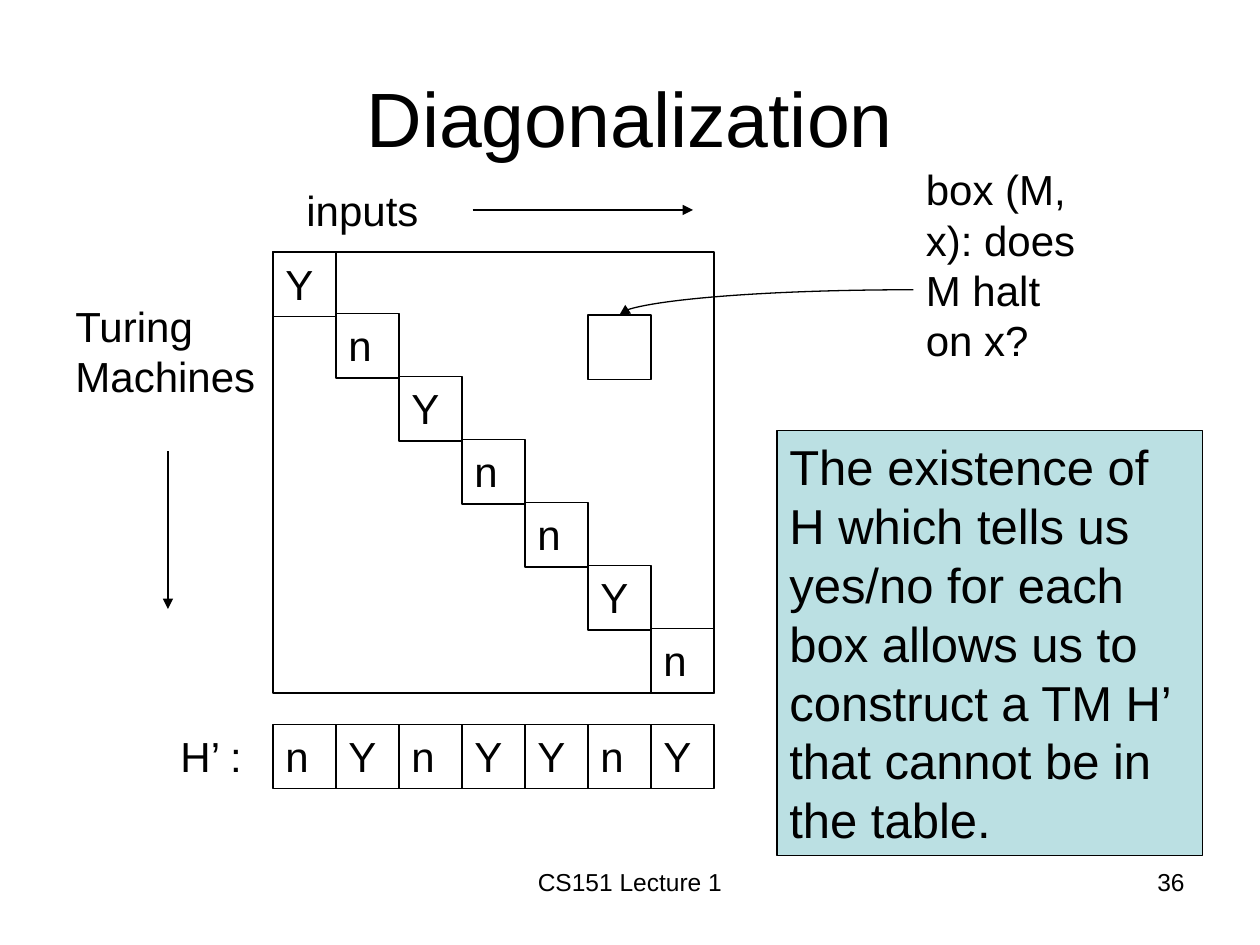
from dataclasses import dataclass

from lxml import etree
from pptx import Presentation
from pptx import util as u
from pptx.dml.color import RGBColor
from pptx.enum import shapes, text
from pptx.oxml.ns import qn

COLS, ROWS = 120, 90
UNIT = u.Inches(10) // COLS
CELL, CELL_H = 6, 6.12
TABLE_X, TABLE_Y, RESULT_Y = 26, 24, 69
DIAGONAL = "YnYnnYn"
FLIP = {"Y": "n", "n": "Y"}
BLACK, TEAL = "000000", "BBE0E3"


@dataclass
class Box:
    x: float
    y: float
    w: float
    h: float
    words: str = ""
    size: int = 24
    align: text.PP_ALIGN = text.PP_ALIGN.LEFT
    anchor: text.MSO_ANCHOR = text.MSO_ANCHOR.TOP
    outlined: bool = False
    fill: str = ""
    grow: bool = True


@dataclass
class Arrow:
    x1: float
    y1: float
    x2: float
    y2: float
    kind: shapes.MSO_CONNECTOR = shapes.MSO_CONNECTOR.STRAIGHT


def grid(n: float) -> int:
    return round(n * UNIT)


def rgb(value: str) -> RGBColor:
    return RGBColor.from_string(value)


def set_line(line) -> None:
    line.color.rgb = rgb(BLACK)
    line.width = u.Pt(0.75)


def draw_box(s, box: Box):
    place = [grid(n) for n in (box.x, box.y, box.w, box.h)]
    if box.outlined:
        sp = s.shapes.add_shape(shapes.MSO_SHAPE.RECTANGLE, *place)
        sp.shadow.inherit = False
        set_line(sp.line)
        if box.fill:
            sp.fill.solid()
            sp.fill.fore_color.rgb = rgb(box.fill)
        else:
            sp.fill.background()
    else:
        sp = s.shapes.add_textbox(*place)
    if box.words:
        tf = sp.text_frame
        tf.word_wrap = True
        tf.vertical_anchor = box.anchor
        if box.grow:
            tf.auto_size = text.MSO_AUTO_SIZE.SHAPE_TO_FIT_TEXT
        p = tf.paragraphs[0]
        p.alignment = box.align
        r = p.add_run()
        r.text = box.words
        r.font.name = "Arial"
        r.font.size = u.Pt(box.size)
        r.font.color.rgb = rgb(BLACK)
    return sp


def draw_arrow(s, arrow: Arrow):
    ends = [grid(n) for n in (arrow.x1, arrow.y1, arrow.x2, arrow.y2)]
    cx = s.shapes.add_connector(arrow.kind, *ends)
    set_line(cx.line)
    etree.SubElement(cx.line._get_or_add_ln(), qn("a:tailEnd"), type="triangle")
    sp_pr = cx._element.spPr
    etree.SubElement(sp_pr, qn("a:effectLst"))
    if arrow.kind == shapes.MSO_CONNECTOR.CURVE:
        sp_pr.find(qn("a:prstGeom")).set("prst", "curvedConnector2")
    return cx


def cell(col: int, y: float, words: str = "") -> Box:
    return Box(TABLE_X + col * CELL, y, CELL, CELL_H, words, outlined=True)


def main() -> None:
    prs = Presentation()
    prs.slide_width, prs.slide_height = grid(COLS), grid(ROWS)
    s = prs.slides.add_slide(prs.slide_layouts[6])

    side = CELL * len(DIAGONAL)
    for box in (
        Box(6, 3.6, 108, 15, "Diagonalization", 44, text.PP_ALIGN.CENTER,
            text.MSO_ANCHOR.MIDDLE, grow=False),
        Box(TABLE_X, TABLE_Y, side, side, outlined=True),
        Box(6, 28, 22, 10.8, "Turing Machines"),
        Box(28, 17, 22, 6, "inputs"),
        Box(16, RESULT_Y, 10, 6, "H’ :"),
    ):
        draw_box(s, box)

    for i, answer in enumerate(DIAGONAL):
        draw_box(s, cell(i, TABLE_Y + i * CELL - (0.12 if i else 0), answer))
        draw_box(s, cell(i, RESULT_Y, FLIP[answer]))

    target = draw_box(s, cell(5, TABLE_Y + CELL))
    question = draw_box(s, Box(87, 15, 17, 25.2, "box (M, x): does M halt on x?"))

    draw_arrow(s, Arrow(16, 43, 16, 58))
    draw_arrow(s, Arrow(45, 20, 66, 20))
    pointer = draw_arrow(s, Arrow(87, 27.6, 59, 30, shapes.MSO_CONNECTOR.CURVE))
    pointer.begin_connect(question, 1)
    pointer.end_connect(target, 0)

    for box in (
        Box(74, 41, 40.5, 40.5,
            "The existence of H which tells us yes/no for each box allows us "
            "to construct a TM H’ that cannot be in the table.",
            28, outlined=True, fill=TEAL),
        Box(41, 82, 38, 6.25, "CS151 Lecture 1", 14, text.PP_ALIGN.CENTER, grow=False),
        Box(86, 82, 28, 6.25, "36", 14, text.PP_ALIGN.RIGHT, grow=False),
    ):
        draw_box(s, box)

    prs.save("out.pptx")


if __name__ == "__main__":
    main()
